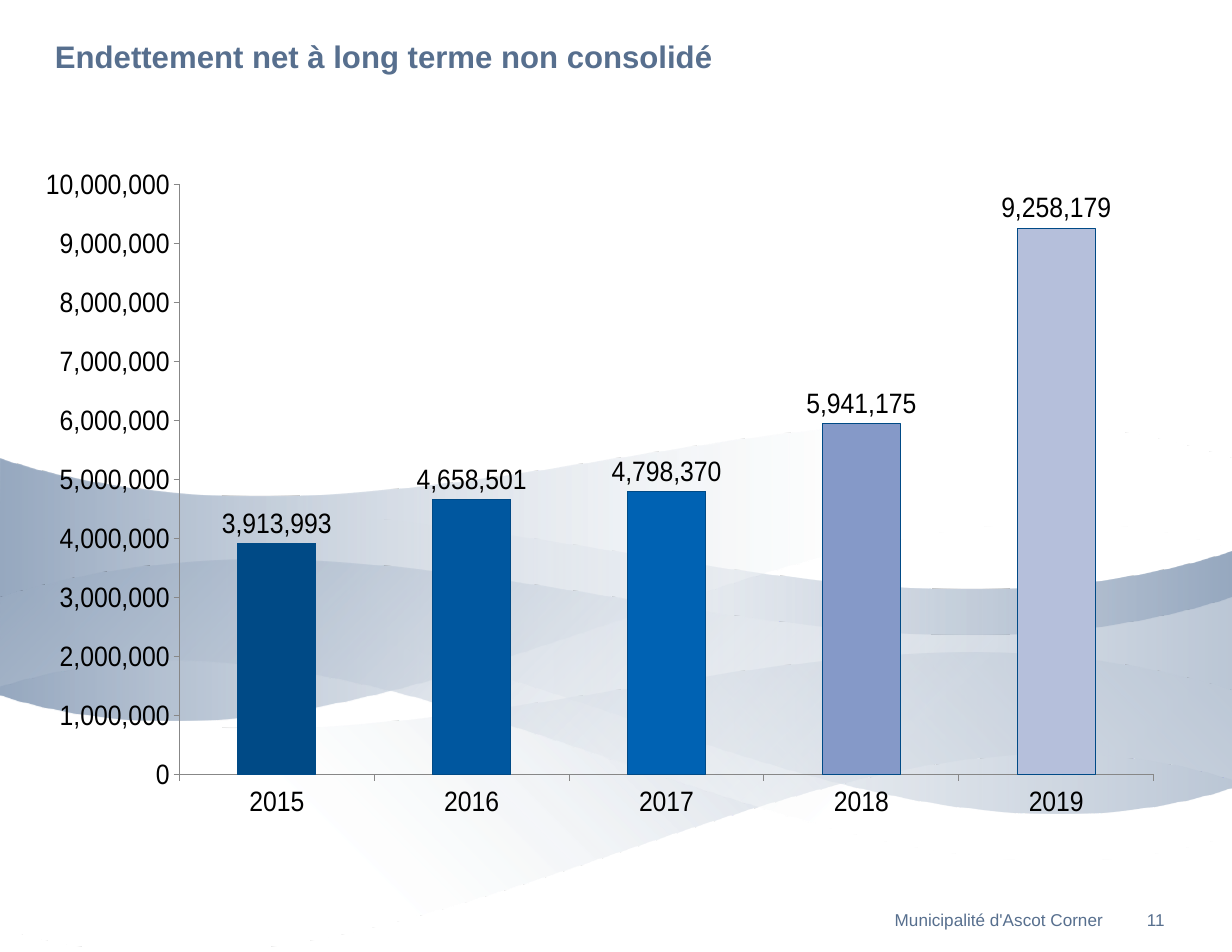
from dataclasses import dataclass

from lxml.etree import SubElement
from pptx import Presentation
from pptx.chart.data import CategoryChartData
from pptx.dml.color import RGBColor
from pptx.enum.chart import XL_CHART_TYPE, XL_LABEL_POSITION, XL_TICK_MARK
from pptx.enum.text import MSO_ANCHOR, PP_ALIGN
from pptx.oxml import parse_xml
from pptx.oxml.ns import nsdecls, qn
from pptx.slide import Slide
from pptx.util import Inches, Pt

SLATE = RGBColor(0x57, 0x6F, 0x8E)
BLACK = RGBColor(0, 0, 0)
AXIS_GRAY = RGBColor(0x87, 0x87, 0x87)
BAR_OUTLINE = RGBColor(0x00, 0x4A, 0x86)
RIBBON_BLUE = RGBColor(0x96, 0xA8, 0xBF)
WHITE = RGBColor(0xFF, 0xFF, 0xFF)
FONT = "Arial"
RIBBON_LEFT, RIBBON_WIDTH, RIBBON_HEIGHT = -0.01, 11.01, 2.68
RIBBON_OUTLINE = [
    ("moveTo", [(0, 0.34)]),
    ("cubicBezTo", [(3.66, -0.83), (7.33, 1.51), (10.99, 0.34)]),
    ("lnTo", [(11, 2.45)]),
    ("cubicBezTo", [(7.34, 3.62), (3.65, -0.03), (-0.01, 1.14)]),
    ("cubicBezTo", [(-0.02, 0.44), (0, 1.04), (0, 0.34)]),
    ("close", []),
]


@dataclass
class Ribbon:
    top: float
    mirrored: bool
    angle: int


@dataclass
class FooterText:
    text: str
    left: float
    width: float
    alignment: PP_ALIGN
    right_margin: float


@dataclass
class Debt:
    year: str
    amount: int
    color: RGBColor


RIBBONS = [
    Ribbon(4.58, False, 180),
    Ribbon(5.82, True, 135),
    Ribbon(3.75, True, 0),
    Ribbon(4.99, False, 45),
]
FOOTERS = [
    FooterText("11", 10.13, 0.37, PP_ALIGN.LEFT, 0),
    FooterText("Municipalité d'Ascot Corner", 4.25, 5.71, PP_ALIGN.RIGHT, 0.11),
]
DEBTS = [
    Debt("2015", 3913993, BAR_OUTLINE),
    Debt("2016", 4658501, RGBColor(0x00, 0x57, 0x9F)),
    Debt("2017", 4798370, RGBColor(0x00, 0x62, 0xB3)),
    Debt("2018", 5941175, RGBColor(0x85, 0x99, 0xC8)),
    Debt("2019", 9258179, RGBColor(0xB5, 0xBF, 0xDB)),
]


def add_ribbon(slide: Slide, ribbon: Ribbon) -> None:
    width, height = Inches(RIBBON_WIDTH), Inches(RIBBON_HEIGHT)
    builder = slide.shapes.build_freeform(0, 0)
    builder.add_line_segments([(width, 0), (width, height), (0, height)])
    shape = builder.convert_to_shape(Inches(RIBBON_LEFT), Inches(ribbon.top))
    shape.shadow.inherit = False
    shape.line.fill.background()

    outline = shape.element.find(f".//{qn('a:path')}")
    for command in list(outline):
        outline.remove(command)
    for name, points in RIBBON_OUTLINE:
        command = SubElement(outline, qn(f"a:{name}"))
        for x, y in points:
            across = 10.99 - x if ribbon.mirrored else x
            point = SubElement(command, qn("a:pt"))
            point.set("x", str(Inches(across - RIBBON_LEFT)))
            point.set("y", str(Inches(y)))

    gradient = parse_xml(
        f'<a:gradFill {nsdecls("a")} rotWithShape="1"><a:gsLst>'
        f'<a:gs pos="0"><a:srgbClr val="{RIBBON_BLUE}"/></a:gs>'
        f'<a:gs pos="71000"><a:srgbClr val="{WHITE}"><a:alpha val="35000"/></a:srgbClr></a:gs>'
        f'</a:gsLst><a:lin ang="{ribbon.angle * 60000}" scaled="0"/></a:gradFill>'
    )
    shape.element.spPr.find(qn("a:custGeom")).addnext(gradient)


def add_footer(slide: Slide, footer: FooterText) -> None:
    box = slide.shapes.add_textbox(
        Inches(footer.left), Inches(8.11), Inches(footer.width), Inches(0.2)
    )
    frame = box.text_frame
    frame.text = footer.text
    frame.word_wrap = False
    frame.vertical_anchor = MSO_ANCHOR.MIDDLE
    frame.margin_left, frame.margin_right = Inches(0.11), Inches(footer.right_margin)
    frame.margin_top = frame.margin_bottom = Inches(0.06)
    paragraph = frame.paragraphs[0]
    paragraph.alignment = footer.alignment
    paragraph.line_spacing = Pt(13.4)
    font = paragraph.runs[0].font
    font.name, font.size, font.color.rgb = FONT, Pt(11), SLATE


def format_title(slide: Slide) -> None:
    title = slide.shapes.title
    title.left, title.top = Inches(0.49), Inches(0.33)
    title.width, title.height = Inches(10), Inches(0.89)
    frame = title.text_frame
    frame.text = "Endettement net à long terme non consolidé"
    frame.vertical_anchor = MSO_ANCHOR.TOP
    frame.margin_left = frame.margin_right = 0
    frame.margin_top = frame.margin_bottom = 0
    paragraph = frame.paragraphs[0]
    paragraph.alignment = PP_ALIGN.LEFT
    font = paragraph.runs[0].font
    font.name, font.size, font.bold, font.color.rgb = FONT, Pt(20), True, SLATE


def add_debt_chart(slide: Slide, debts: list[Debt]) -> None:
    data = CategoryChartData(number_format="#,##0")
    data.categories = [debt.year for debt in debts]
    data.add_series("Series 1", [debt.amount for debt in debts])
    chart = slide.shapes.add_chart(
        XL_CHART_TYPE.COLUMN_CLUSTERED,
        Inches(0.41), Inches(1.42), Inches(10.17), Inches(5.96), data,
    ).chart
    chart.has_legend = False
    chart.has_title = False
    chart.font.name, chart.font.size, chart.font.color.rgb = FONT, Pt(18), BLACK

    for axis in (chart.category_axis, chart.value_axis):
        axis.has_major_gridlines = False
        axis.major_tick_mark = XL_TICK_MARK.OUTSIDE
        axis.minor_tick_mark = XL_TICK_MARK.NONE
        axis.format.line.color.rgb = AXIS_GRAY
        axis.format.line.width = Pt(0.75)
    value_axis = chart.value_axis
    value_axis.minimum_scale = 0
    value_axis.major_unit = 1_000_000
    value_axis.tick_labels.number_format = "#,##0"
    value_axis.tick_labels.number_format_is_linked = False

    plot = chart.plots[0]
    plot.gap_width = 150
    plot.vary_by_categories = False
    plot.has_data_labels = True
    labels = plot.data_labels
    labels.show_value = True
    labels.position = XL_LABEL_POSITION.OUTSIDE_END
    labels.number_format, labels.number_format_is_linked = "#,##0", False
    for index, debt in enumerate(debts):
        bar = plot.series[0].points[index].format
        bar.fill.solid()
        bar.fill.fore_color.rgb = debt.color
        bar.line.color.rgb = BAR_OUTLINE
        bar.line.width = Pt(0.75)

    plot_area = chart.element.find(f".//{qn('c:plotArea')}")
    for existing in plot_area.findall(qn("c:layout")):
        plot_area.remove(existing)
    layout = parse_xml(f'<c:layout {nsdecls("c")}><c:manualLayout/></c:layout>')
    settings = {
        "layoutTarget": "inner", "xMode": "edge", "yMode": "edge",
        "x": "0", "y": "0.038", "w": "0.969", "h": "0.884",
    }
    for name, value in settings.items():
        SubElement(layout[0], qn(f"c:{name}")).set("val", value)
    plot_area.insert(0, layout)


def main() -> None:
    presentation = Presentation()
    presentation.slide_width = Inches(11)
    presentation.slide_height = Inches(8.5)
    slide = presentation.slides.add_slide(presentation.slide_layouts[5])
    for ribbon in RIBBONS:
        add_ribbon(slide, ribbon)
    for footer in FOOTERS:
        add_footer(slide, footer)
    format_title(slide)
    add_debt_chart(slide, DEBTS)
    presentation.save("out.pptx")


if __name__ == "__main__":
    main()
